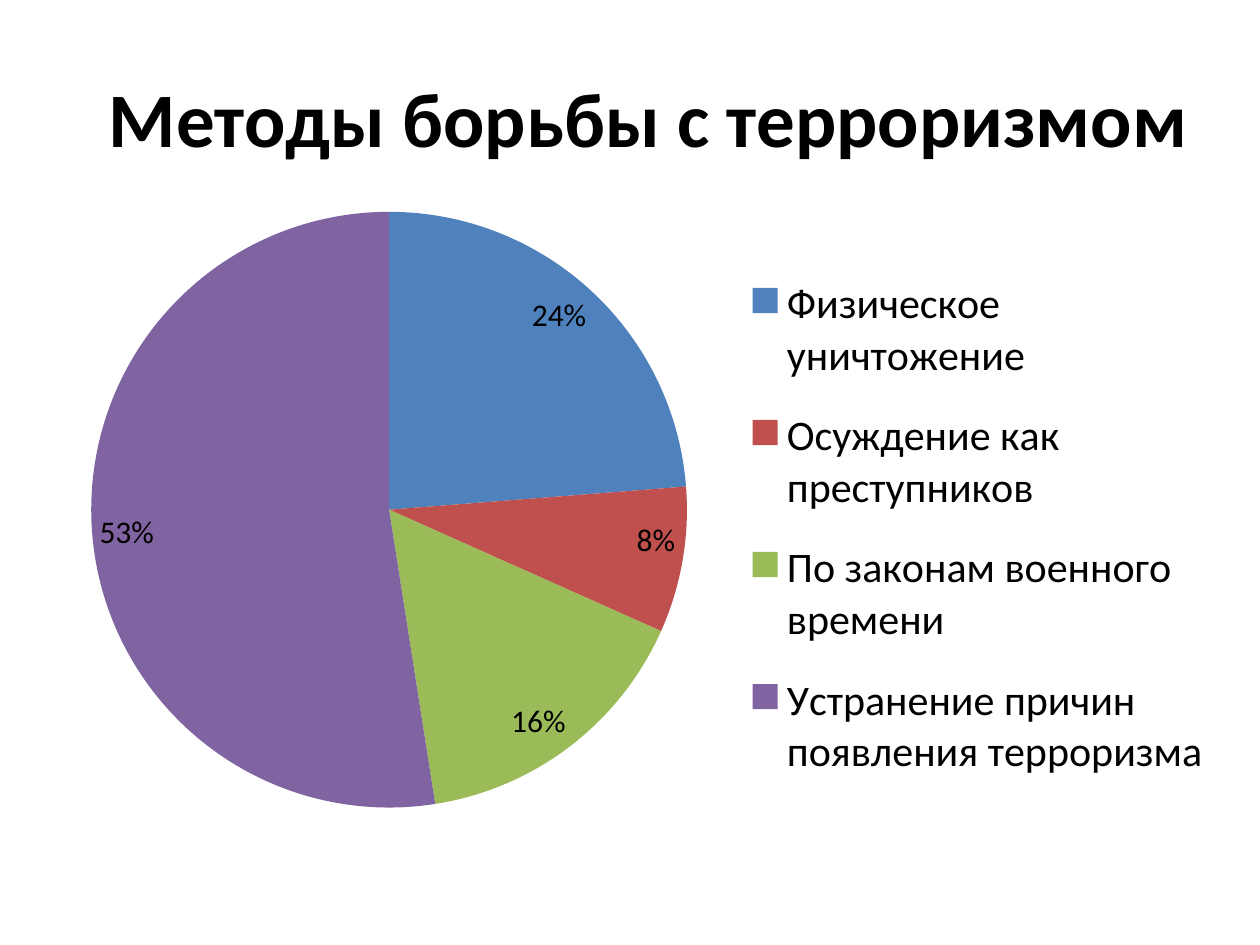
import pptx
import pptx.chart.data
import pptx.dml.color
import pptx.enum.chart
import pptx.enum.text
import pptx.oxml
import pptx.oxml.ns
import pptx.util

Pt = pptx.util.Pt
RGBColor = pptx.dml.color.RGBColor

BLACK = RGBColor(0x00, 0x00, 0x00)
BLUE = RGBColor(0x4F, 0x81, 0xBD)
RED = RGBColor(0xC0, 0x50, 0x4D)
GREEN = RGBColor(0x9B, 0xBB, 0x59)
PURPLE = RGBColor(0x80, 0x64, 0xA2)

METHODS = [
    ("Физическое уничтожение", 0.24, BLUE),
    ("Осуждение как преступников", 0.08, RED),
    ("По законам военного времени", 0.16, GREEN),
    ("Устранение причин появления терроризма", 0.53, PURPLE),
]


def layout_xml(x, y, w, h, inner=False):
    """Manual chart layout, in fractions of the chart area."""
    target = '<c:layoutTarget val="inner"/>' if inner else ""
    return pptx.oxml.parse_xml(
        f'<c:layout {pptx.oxml.ns.nsdecls("c")}><c:manualLayout>{target}'
        '<c:xMode val="edge"/><c:yMode val="edge"/>'
        f'<c:x val="{x}"/><c:y val="{y}"/><c:w val="{w}"/><c:h val="{h}"/>'
        '</c:manualLayout></c:layout>')


def set_layout(parent, layout, after=None):
    for old in parent.findall(pptx.oxml.ns.qn("c:layout")):
        parent.remove(old)
    if after is None:
        parent.insert(0, layout)
    else:
        after.addnext(layout)


class Deck:
    font = "Calibri"
    color = BLACK

    def __init__(self, prs):
        self.slide = prs.slides.add_slide(prs.slide_layouts[5])

    def style(self, font, size, bold=False):
        font.name = self.font
        font.size = Pt(size)
        font.bold = bold
        font.color.rgb = self.color

    def title(self, text, x, y, w, h, size):
        sp = self.slide.shapes.title
        sp.left, sp.top, sp.width, sp.height = Pt(x), Pt(y), Pt(w), Pt(h)
        tf = sp.text_frame
        tf.text = text
        tf.word_wrap = True
        tf.vertical_anchor = pptx.enum.text.MSO_ANCHOR.MIDDLE
        p = tf.paragraphs[0]
        p.alignment = pptx.enum.text.PP_ALIGN.CENTER
        self.style(p.font, size, bold=True)

    def pie(self, rows, x, y, w, h, size, legend_size):
        data = pptx.chart.data.CategoryChartData(number_format="0%")
        data.categories = [name for name, _, _ in rows]
        data.add_series("Series 1", [value for _, value, _ in rows])
        chart = self.slide.shapes.add_chart(
            pptx.enum.chart.XL_CHART_TYPE.PIE,
            Pt(x), Pt(y), Pt(w), Pt(h), data).chart
        chart.has_title = False
        self.style(chart.font, size)

        plot = chart.plots[0]
        plot.vary_by_categories = True
        for i, (_, _, color) in enumerate(rows):
            fill = plot.series[0].points[i].format.fill
            fill.solid()
            fill.fore_color.rgb = color

        plot.has_data_labels = True
        labels = plot.data_labels
        labels.show_value = True
        labels.show_percentage = False
        labels.number_format = "0%"
        labels.number_format_is_linked = False
        labels.position = pptx.enum.chart.XL_LABEL_POSITION.INSIDE_END
        self.style(labels.font, size)

        chart.has_legend = True
        legend = chart.legend
        legend.position = pptx.enum.chart.XL_LEGEND_POSITION.RIGHT
        legend.include_in_layout = False
        self.style(legend.font, legend_size)

        plot_area = chart.element.find(".//" + pptx.oxml.ns.qn("c:plotArea"))
        set_layout(plot_area, layout_xml(0.05, 0.03, 0.5, 0.94, inner=True))
        legend_el = chart.element.find(".//" + pptx.oxml.ns.qn("c:legend"))
        set_layout(legend_el, layout_xml(0.59, 0.09, 0.4, 0.88),
                   after=legend_el.find(pptx.oxml.ns.qn("c:legendPos")))


def main():
    prs = pptx.Presentation()
    prs.slide_width, prs.slide_height = Pt(720), Pt(540)
    deck = Deck(prs)
    deck.title("Методы борьбы с терроризмом", 46.8, 21.6, 648, 90, size=44)
    deck.pie(METHODS, 16.5, 110.2, 686.2, 362.2, size=18, legend_size=24)
    prs.save("out.pptx")


if __name__ == "__main__":
    main()
